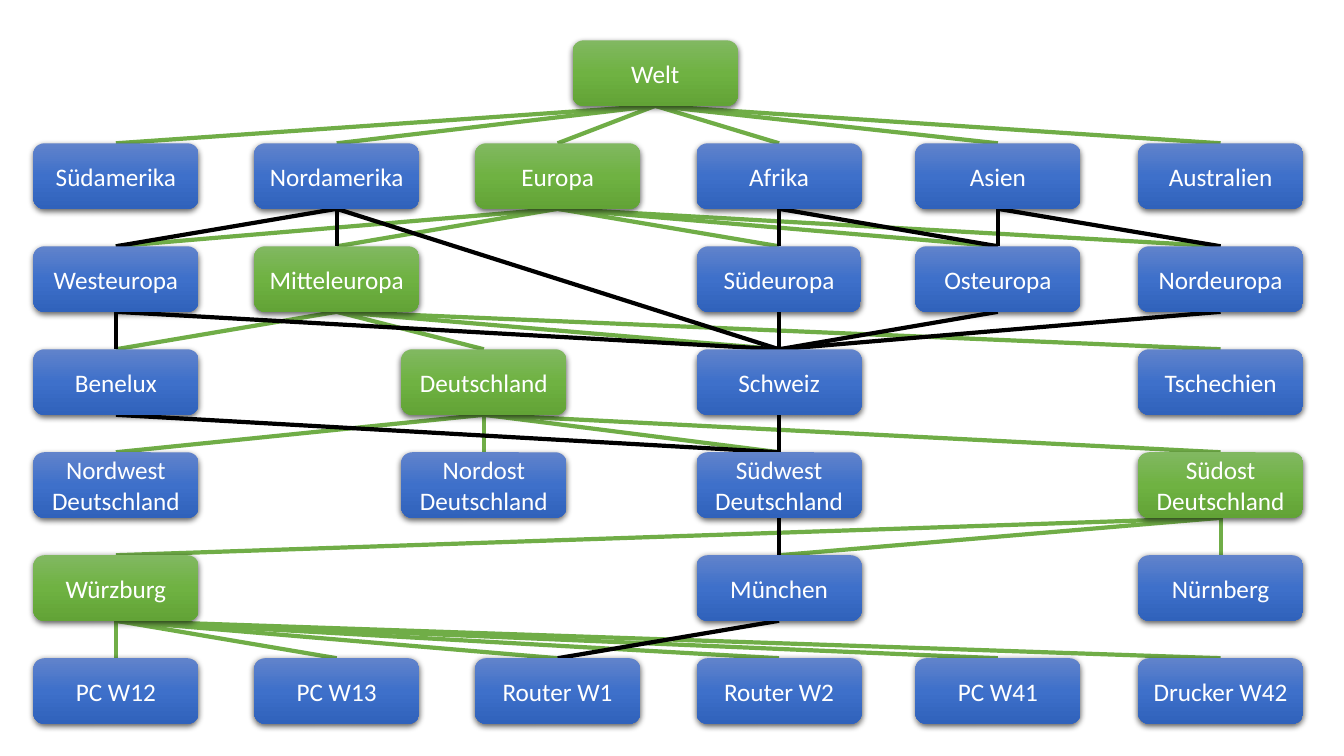
"""Build a slide with a location tree from the world down to single devices."""
from copy import deepcopy
from dataclasses import dataclass

from lxml import etree
from pptx import Presentation
from pptx.dml import color as c
from pptx.enum import shapes, text
from pptx.oxml import ns
from pptx.shapes import autoshape, connector
from pptx.slide import Slide
from pptx.util import Pt

SLIDE_SIZE = (960, 540)
BOX_WIDTH, BOX_HEIGHT = 118, 46.8
FIRST_TOP, LEVEL_PITCH = 28.8, 73.56
COLUMNS = {"a": 82.8, "b": 240.5, "bc": 345.6, "c": 398.3, "cd": 468,
           "d": 556.5, "e": 712.8, "f": 871.9}
BLUE = ("6183CB", "3E70CA", "3062BB")
GREEN = ("81B861", "6FB242", "62A336")
TREE_LINE, CROSS_LINE = "70AD47", "000000"
TOP_SITE, BOTTOM_SITE = 0, 2


@dataclass(frozen=True)
class Place:
    label: str
    column: str
    on_path: bool = False
    width: float = BOX_WIDTH


@dataclass(frozen=True)
class Link:
    parent: str
    child: str
    color: str


LEVELS = [
    [Place("Welt", "cd", True)],
    [Place("Südamerika", "a"), Place("Nordamerika", "b"),
     Place("Europa", "c", True), Place("Afrika", "d"),
     Place("Asien", "e"), Place("Australien", "f")],
    [Place("Westeuropa", "a"), Place("Mitteleuropa", "b", True),
     Place("Südeuropa", "d", width=116.8), Place("Osteuropa", "e"),
     Place("Nordeuropa", "f")],
    [Place("Benelux", "a"), Place("Deutschland", "bc", True),
     Place("Schweiz", "d"), Place("Tschechien", "f")],
    [Place("Nordwest\nDeutschland", "a"), Place("Nordost\nDeutschland", "bc"),
     Place("Südwest\nDeutschland", "d"), Place("Südost\nDeutschland", "f", True)],
    [Place("Würzburg", "a", True), Place("München", "d"), Place("Nürnberg", "f")],
    [Place("PC W12", "a"), Place("PC W13", "b"), Place("Router W1", "c"),
     Place("Router W2", "d"), Place("PC W41", "e"), Place("Drucker W42", "f")],
]
CROSS_LINKS = {
    "Nordamerika": ["Westeuropa", "Mitteleuropa", "Schweiz"],
    "Asien": ["Nordeuropa", "Osteuropa"],
    "Afrika": ["Südeuropa", "Osteuropa"],
    "Westeuropa": ["Schweiz", "Benelux"],
    "Südeuropa": ["Schweiz"],
    "Osteuropa": ["Schweiz"],
    "Nordeuropa": ["Schweiz"],
    "Benelux": ["Südwest\nDeutschland"],
    "Schweiz": ["Südwest\nDeutschland"],
    "Südwest\nDeutschland": ["München"],
    "München": ["Router W1"],
}


def rgb(value: str) -> c.RGBColor:
    return c.RGBColor.from_string(value)


def all_links() -> list[Link]:
    tree = [Link(parent.label, child.label, TREE_LINE)
            for level, below in zip(LEVELS, LEVELS[1:])
            for parent in level if parent.on_path
            for child in below]
    cross = [Link(parent, child, CROSS_LINE)
             for parent, children in CROSS_LINKS.items() for child in children]
    return tree + cross


def draw_link(slide: Slide, link: Link) -> connector.Connector:
    line = slide.shapes.add_connector(shapes.MSO_CONNECTOR.STRAIGHT, 0, 0, 0, 0)
    line.line.color.rgb = rgb(link.color)
    line.line.width = Pt(3)
    etree.SubElement(line.element.spPr, ns.qn("a:effectLst"))
    return line


def fill_gradient(box: autoshape.Shape, colors: tuple[str, ...]) -> None:
    box.fill.gradient()
    box.fill.gradient_angle = 270
    stop_list = box.element.spPr.find(".//" + ns.qn("a:gsLst"))
    stop_list.append(deepcopy(stop_list[-1]))
    for stop, position, value in zip(box.fill.gradient_stops, (0, 0.5, 1), colors):
        stop.position = position
        stop.color.rgb = rgb(value)


def add_shadow(box: autoshape.Shape) -> None:
    box.shadow.inherit = False
    effects = box.element.spPr.find(ns.qn("a:effectLst"))
    shadow = etree.SubElement(
        effects, ns.qn("a:outerShdw"), blurRad=str(Pt(4.5)), dist=str(Pt(1.5)),
        dir="5400000", algn="ctr", rotWithShape="0")
    black = etree.SubElement(shadow, ns.qn("a:srgbClr"), val="000000")
    etree.SubElement(black, ns.qn("a:alpha"), val="63000")


def draw_place(slide: Slide, place: Place, level: int) -> autoshape.Shape:
    box = slide.shapes.add_shape(
        shapes.MSO_SHAPE.ROUNDED_RECTANGLE,
        Pt(COLUMNS[place.column] - place.width / 2),
        Pt(FIRST_TOP + level * LEVEL_PITCH), Pt(place.width), Pt(BOX_HEIGHT))
    fill_gradient(box, GREEN if place.on_path else BLUE)
    box.line.fill.background()
    add_shadow(box)
    frame = box.text_frame
    frame.text = place.label
    frame.vertical_anchor = text.MSO_ANCHOR.MIDDLE
    for paragraph in frame.paragraphs:
        paragraph.alignment = text.PP_ALIGN.CENTER
        for run in paragraph.runs:
            run.font.name = "Calibri"
            run.font.size = Pt(18)
            run.font.color.rgb = rgb("FFFFFF")
    return box


def main() -> None:
    deck = Presentation()
    deck.slide_width, deck.slide_height = map(Pt, SLIDE_SIZE)
    slide = deck.slides.add_slide(deck.slide_layouts[6])
    lines = [(link, draw_link(slide, link)) for link in all_links()]
    boxes = {place.label: draw_place(slide, place, level)
             for level, places in enumerate(LEVELS) for place in places}
    for link, line in lines:
        line.begin_connect(boxes[link.parent], BOTTOM_SITE)
        line.end_connect(boxes[link.child], TOP_SITE)
    deck.save("out.pptx")


if __name__ == "__main__":
    main()
